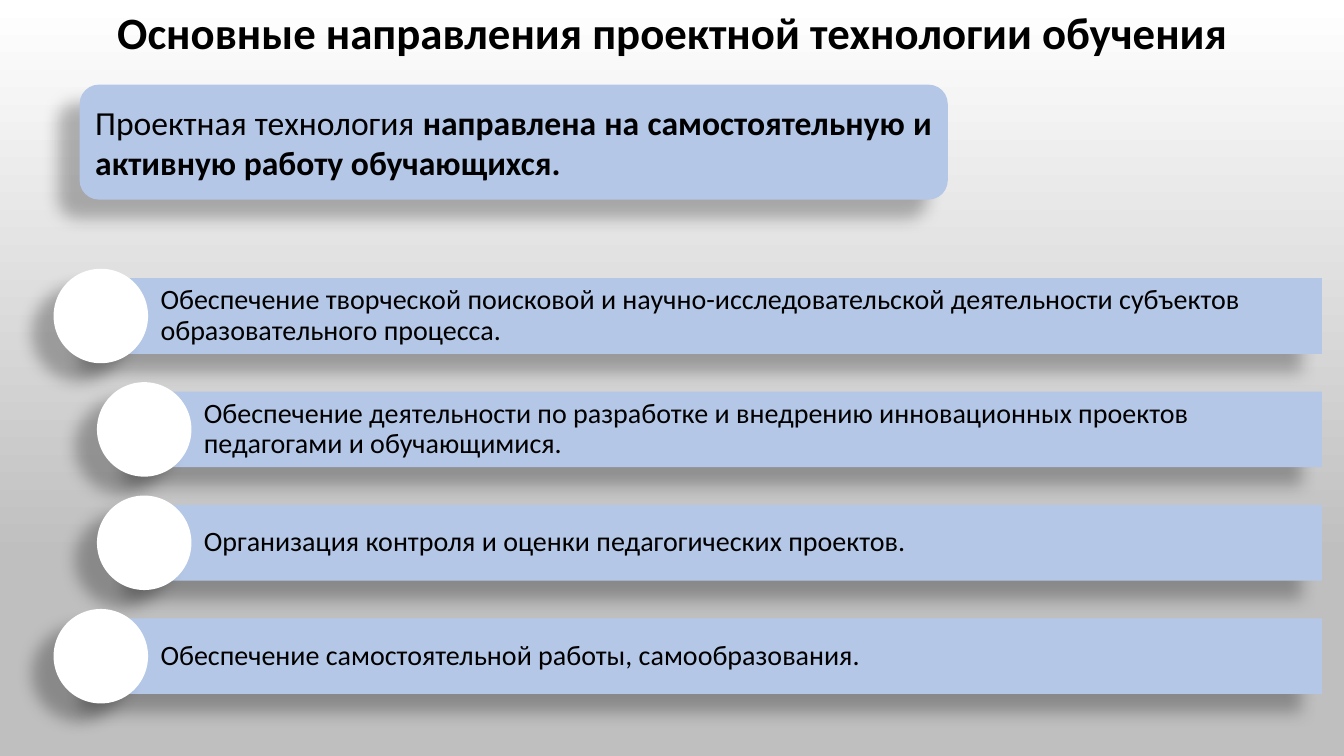
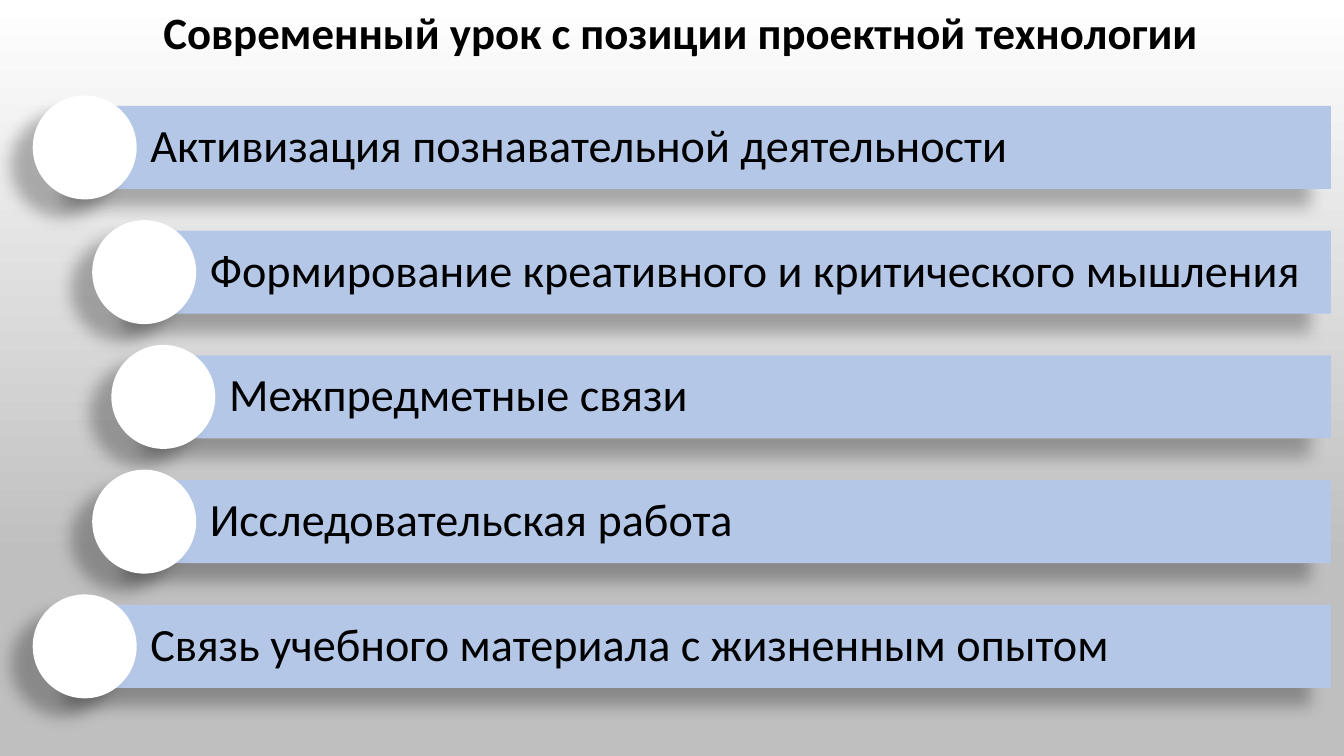
from copy import deepcopy
from pptx import Presentation
from pptx.dml.color import RGBColor
from pptx.enum.shapes import MSO_SHAPE as Shape
from pptx.enum.text import MSO_ANCHOR as Anchor, MSO_AUTO_SIZE as AutoSize, PP_ALIGN as Align
from pptx.oxml import parse_xml
from pptx.oxml.ns import nsdecls
from pptx.util import Inches, Pt

FONT = "Calibri"
BLACK, WHITE, GREY, BLUE = "000000", "FFFFFF", "BFBFBF", "B4C7E7"
SHADOW = (
    f'<a:outerShdw {nsdecls("a")} blurRad="{Pt(11.8)}" dist="{Pt(19.7)}" '
    f'dir="{141 * 60000}" algn="ctr"><a:srgbClr val="{BLACK}">'
    '<a:alpha val="28000"/></a:srgbClr></a:outerShdw>'
)


def color(value):
    return RGBColor.from_string(value)


def paint_background(master):
    """White at the top, fading to an even grey from 74 % of the height down."""
    fill = master.background.fill
    fill.gradient()
    fill.gradient_angle = 270
    stop_list = master.element.xpath("./p:cSld/p:bg//a:gsLst")[0]
    stop_list.append(deepcopy(stop_list[-1]))
    for stop, (position, value) in zip(fill.gradient_stops, ((0, WHITE), (0.74, GREY), (1, GREY))):
        stop.position = position
        stop.color.rgb = color(value)


def add_span(para, text, size, bold=False):
    span = para.add_run()
    span.text = text
    span.font.name = FONT
    span.font.size = Pt(size)
    span.font.bold = bold
    span.font.color.rgb = color(BLACK)


def add_title(page, text, left, width):
    box = page.shapes.add_textbox(Inches(left), 0, Inches(width), Inches(0.64))
    box.text_frame.word_wrap = False
    box.text_frame.auto_size = AutoSize.SHAPE_TO_FIT_TEXT
    para = box.text_frame.paragraphs[0]
    para.alignment = Align.CENTER
    add_span(para, text, 32, bold=True)


def add_raised_shape(page, kind, left, top, width, height, fill):
    shape = page.shapes.add_shape(kind, *map(Inches, (left, top, width, height)))
    shape.fill.solid()
    shape.fill.fore_color.rgb = color(fill)
    shape.line.fill.background()
    shape.shadow.inherit = False
    shape.element.xpath("./p:spPr/a:effectLst")[0].append(parse_xml(SHADOW))
    shape.text_frame.word_wrap = True
    shape.text_frame.vertical_anchor = Anchor.MIDDLE
    return shape


def add_statement(page, left, top, width, height, plain, strong):
    card = add_raised_shape(page, Shape.ROUNDED_RECTANGLE, left, top, width, height, BLUE)
    para = card.text_frame.paragraphs[0]
    para.alignment = Align.JUSTIFY
    add_span(para, plain, 24)
    add_span(para, strong, 24, bold=True)


def add_curved_list(page, left, top, right, bar_height, rows, size, inset):
    """Stack bars led by circles; each row is (indent, text), gaps are half a bar."""
    circle = 1.25 * bar_height
    for index, (indent, text) in enumerate(rows):
        bar_left = left + indent
        bar_top = top + index * 1.5 * bar_height
        bar = add_raised_shape(page, Shape.RECTANGLE, bar_left, bar_top,
                               right - bar_left, bar_height, BLUE)
        frame = bar.text_frame
        frame.margin_left = Inches(0.79 * bar_height)
        frame.margin_top = frame.margin_right = frame.margin_bottom = Inches(inset)
        para = frame.paragraphs[0]
        para.alignment = Align.LEFT
        para.line_spacing = 0.9
        add_span(para, text, size)
        add_raised_shape(page, Shape.OVAL, bar_left - circle / 2,
                         bar_top + (bar_height - circle) / 2, circle, circle, WHITE)


def add_directions_slide(page):
    add_title(page, "Основные направления проектной технологии обучения", 1.01, 11.33)
    add_statement(page, 0.79, 0.84, 8.61, 1.14, "Проектная технология ",
                  "направлена на самостоятельную и активную работу обучающихся.")
    add_curved_list(page, 1, 2.76, 13.11, 0.75, (
        (0, "Обеспечение творческой поисковой и научно-исследовательской деятельности "
            "субъектов образовательного процесса."),
        (0.43, "Обеспечение деятельности по разработке и внедрению инновационных проектов "
               "педагогами и обучающимися."),
        (0.43, "Организация контроля и оценки педагогических проектов."),
        (0, "Обеспечение самостоятельной работы, самообразования."),
    ), size=20, inset=0.06)


def add_lesson_slide(page):
    add_title(page, "Современный урок с позиции проектной технологии", 0.98, 11.55)
    add_curved_list(page, 0.84, 1.05, 13.2, 0.825, (
        (0, "Активизация познавательной деятельности"),
        (0.59, "Формирование креативного и критического мышления"),
        (0.78, "Межпредметные связи"),
        (0.59, "Исследовательская работа"),
        (0, "Связь учебного материала с жизненным опытом"),
    ), size=33, inset=0.09)


def main():
    deck = Presentation()
    deck.slide_width, deck.slide_height = Inches(13.33), Inches(7.5)
    paint_background(deck.slide_master)
    for build in (add_directions_slide, add_lesson_slide):
        build(deck.slides.add_slide(deck.slide_layouts[6]))
    deck.save("out.pptx")


if __name__ == "__main__":
    main()
